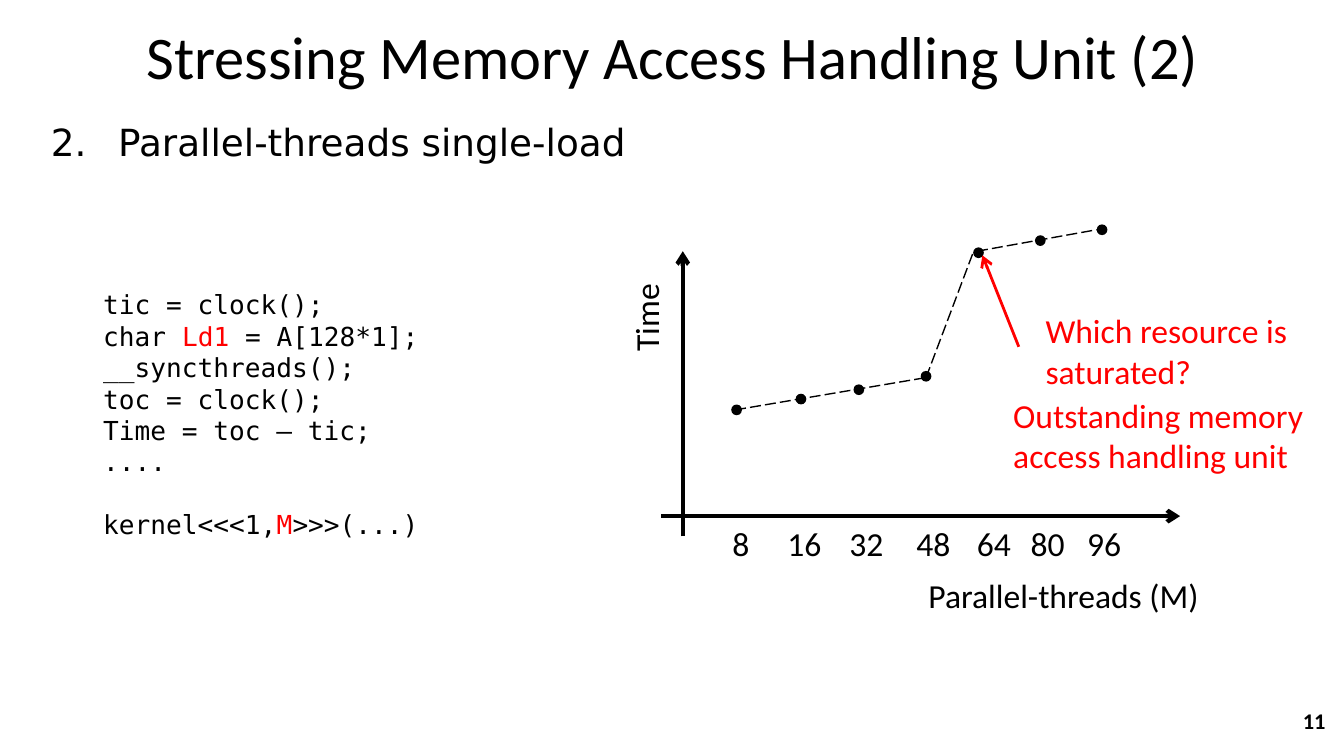
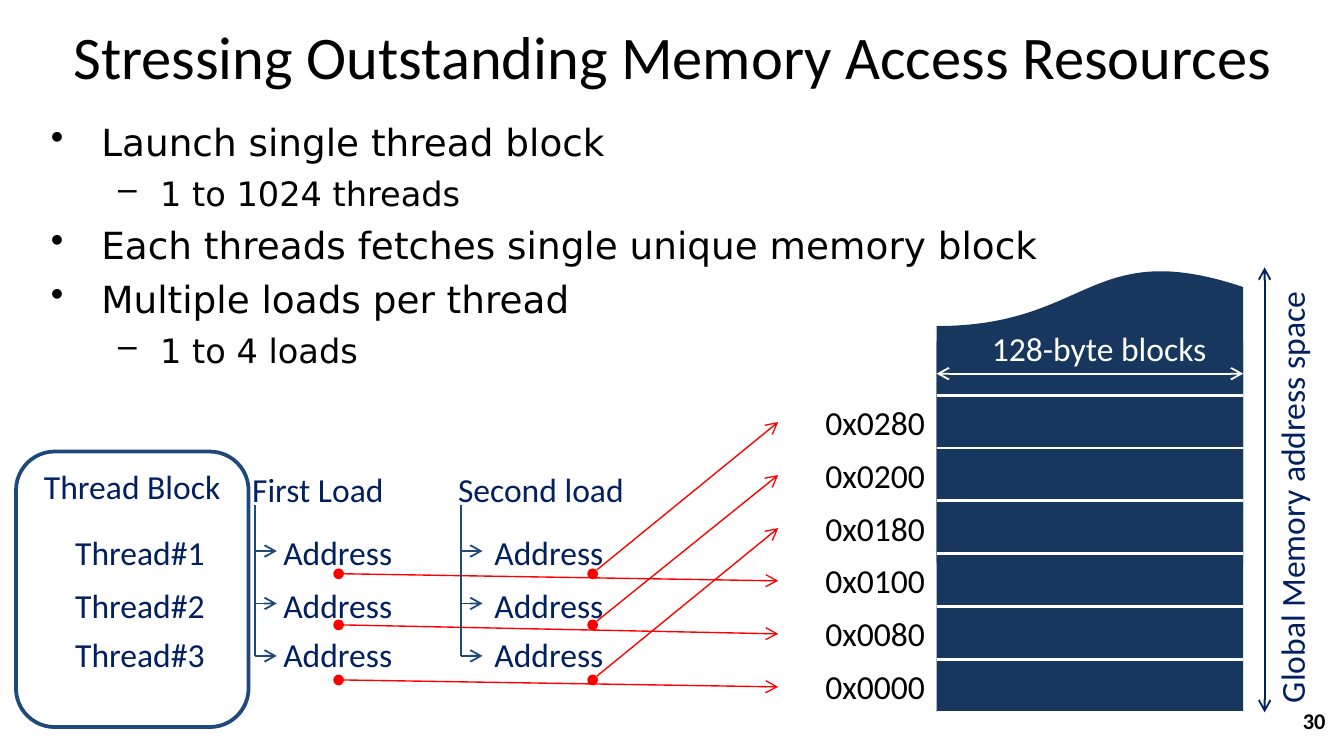
"""Build two slides on stressing GPU memory access handling."""
from typing import NamedTuple, Optional, Union

from lxml.etree import SubElement
from pptx import Presentation
from pptx.dml.color import RGBColor
from pptx.enum.dml import MSO_LINE
from pptx.enum.shapes import MSO_CONNECTOR, MSO_SHAPE as SHAPE
from pptx.enum.text import MSO_ANCHOR as ANCHOR, MSO_AUTO_SIZE as AUTO, PP_ALIGN as ALIGN
from pptx.oxml.ns import qn
from pptx.util import Pt

BLACK, WHITE, RED = "000000", "FFFFFF", "FF0000"
NAVY, BLUE, BLOCK = "002060", "1F497D", "17375E"
SANS, BODY, MONO = "Calibri", "DejaVu Sans", "DejaVu Sans Mono"
DOT = 5.76
LABEL_H = 28.8


class Box(NamedTuple):
    left: float
    top: float
    width: float
    height: float


class Style(NamedTuple):
    size: float = 18
    color: str = BLACK
    font: str = SANS
    bold: bool = False
    align: ALIGN = ALIGN.LEFT


class Span(NamedTuple):
    text: str
    color: str


class Bullet(NamedTuple):
    text: str
    mark: str = "•"
    size: float = 20
    level: int = 0
    indent: float = 27
    hang: float = 27


class Sample(NamedTuple):
    threads: int
    x: float
    y: float
    label_x: float


class Load(NamedTuple):
    title: str
    title_x: float
    bracket_x: float
    address_x: float
    dot_x: float
    start_dx: float
    start_dy: float
    target_y: float


Line = Union[str, list[Span]]

SAMPLES = [
    Sample(8, 394.6, 219.6, 397.1),
    Sample(16, 429.1, 213.8, 431.3),
    Sample(32, 460.1, 208.8, 464.4),
    Sample(48, 496.1, 201.6, 500.4),
    Sample(64, 524.2, 135.4, 532.8),
    Sample(80, 557.3, 128.9, 561.6),
    Sample(96, 590.4, 123.1, 591.8),
]
TRENDS = [(393.8, 219.6, 496.1, 202.3), (523.4, 134.6, 587.5, 123.1),
          (496.1, 202.3, 521.3, 135.4)]
LOADS = [
    Load("First Load", 110.9, 136.8, 144.7, 181.4, 2.9, 0, 311.2),
    Load("Second load", 230.4, 247, 257.8, 317.5, 2.2, -2, 226.1),
]
THREAD_TOPS = [281.5, 309.6, 336.2]
DOT_YS = [307.4, 334.8, 364.3]


def rgb(value: str) -> RGBColor:
    """Turn a hex string into a colour."""
    return RGBColor.from_string(value)


def style_paragraph(p, style: Style) -> None:
    """Apply alignment and font to a paragraph."""
    p.alignment = style.align
    p.font.size, p.font.name, p.font.bold = Pt(style.size), style.font, style.bold
    p.font.color.rgb = rgb(style.color)


def write(tf, lines: list[Line], style: Style) -> None:
    """Fill a text frame, one paragraph per line."""
    for i, line in enumerate(lines):
        p = tf.paragraphs[0] if i == 0 else tf.add_paragraph()
        style_paragraph(p, style)
        for span in [line] if isinstance(line, str) else line:
            r = p.add_run()
            if isinstance(span, str):
                r.text = span
            else:
                r.text = span.text
                r.font.color.rgb = rgb(span.color)


def add_text(slide, box: Box, lines: list[Line], style: Style = Style(), wrap: bool = False,
             rotation: float = 0, fit: bool = True, anchor: ANCHOR = ANCHOR.TOP):
    """Add a text box and return its frame."""
    sp = slide.shapes.add_textbox(*map(Pt, box))
    sp.rotation = rotation
    tf = sp.text_frame
    tf.word_wrap = wrap
    tf.auto_size = AUTO.SHAPE_TO_FIT_TEXT if fit else AUTO.NONE
    tf.vertical_anchor = anchor
    write(tf, lines, style)
    return tf


def add_bullets(slide, bullets: list[Bullet]) -> None:
    """Add the body list."""
    sp = slide.shapes.add_textbox(*map(Pt, (20.2, 60.5, 680.4, 301)))
    tf = sp.text_frame
    tf.word_wrap = True
    for i, item in enumerate(bullets):
        p = tf.paragraphs[0] if i == 0 else tf.add_paragraph()
        p.level = item.level
        p.space_before = Pt(item.size * 0.25)
        props = p._p.get_or_add_pPr()
        props.set("marL", str(Pt(item.indent)))
        props.set("indent", str(-Pt(item.hang)))
        if item.mark.endswith("."):
            SubElement(props, qn("a:buAutoNum"), type="arabicPeriod", startAt=item.mark[:-1])
        else:
            SubElement(props, qn("a:buChar"), char=item.mark)
        style_paragraph(p, Style(item.size, font=BODY))
        p.add_run().text = item.text


def add_shape(slide, kind: SHAPE, box: Box, fill: Optional[str] = None,
              line: Optional[str] = None):
    """Add a flat preset shape."""
    sp = slide.shapes.add_shape(kind, *map(Pt, box))
    sp.shadow.inherit = False
    if fill:
        sp.fill.solid()
        sp.fill.fore_color.rgb = rgb(fill)
    else:
        sp.fill.background()
    if line:
        sp.line.color.rgb = rgb(line)
        sp.line.width = Pt(2)
    else:
        sp.line.fill.background()
    return sp


def add_dot(slide, x: float, y: float, color: str) -> None:
    """Add a dot centred on a point."""
    add_shape(slide, SHAPE.OVAL, Box(x - DOT / 2, y - DOT / 2, DOT, DOT), color)


def add_line(slide, x1: float, y1: float, x2: float, y2: float, color: str, width: float,
             ends: tuple[str, ...] = (), dashed: bool = False) -> None:
    """Add a straight line with optional arrowheads."""
    sp = slide.shapes.add_connector(MSO_CONNECTOR.STRAIGHT, *map(Pt, (x1, y1, x2, y2)))
    sp.line.color.rgb = rgb(color)
    sp.line.width = Pt(width)
    if dashed:
        sp.line.dash_style = MSO_LINE.LONG_DASH
    for end in ends:
        SubElement(sp.line._get_or_add_ln(), qn(f"a:{end}"), type="arrow")
    SubElement(sp._element.spPr, qn("a:effectLst"))


def new_slide(prs, title: str, number: int):
    """Add a slide with its title and page number."""
    slide = prs.slides.add_slide(prs.slide_layouts[5])
    sp = slide.shapes.title
    sp.left, sp.top, sp.width, sp.height = map(Pt, (20.2, 10.1, 680.4, 39.6))
    tf = sp.text_frame
    tf.auto_size = AUTO.NONE
    tf.vertical_anchor = ANCHOR.MIDDLE
    write(tf, [title], Style(32.4, align=ALIGN.CENTER))
    add_text(slide, Box(513.4, 375.1, 203.8, 21.6), [str(number)],
             Style(12, bold=True, align=ALIGN.RIGHT), True, fit=False, anchor=ANCHOR.MIDDLE)
    return slide


def build_parallel_threads(prs) -> None:
    """Build the slide with the code and the timing sketch."""
    slide = new_slide(prs, "Stressing Memory Access Handling Unit (2)", 11)
    add_bullets(slide, [Bullet("Parallel-threads single-load", "2.", indent=36, hang=36)])
    code = [
        "tic = clock();",
        [Span("char ", BLACK), Span("Ld1", RED), Span(" = A[128*1];", BLACK)],
        "__syncthreads();",
        "toc = clock();",
        "Time = toc – tic;",
        "....",
        [Span("kernel<<<1,", BLACK), Span("M", RED), Span(">>>(...)", BLACK)],
    ]
    tf = add_text(slide, Box(48.2, 151.2, 183.6, 143.3), code, Style(14, font=MONO))
    tf.paragraphs[-1].space_before = Pt(16.8)

    add_line(slide, 354.2, 276.5, 632.2, 276.5, BLACK, 2.25, ("tailEnd",))
    add_line(slide, 365.8, 287.3, 365.8, 134.6, BLACK, 2.25, ("tailEnd",))
    add_text(slide, Box(490.3, 304.6, 161.3, LABEL_H), ["Parallel-threads (M)"])
    add_text(slide, Box(320.4, 155.5, 51.1, LABEL_H), ["Time"], rotation=270)
    for trend in TRENDS:
        add_line(slide, *trend, BLACK, 0.75, dashed=True)
    for s in SAMPLES:
        add_dot(slide, s.x, s.y, BLACK)
        width = 14.4 + 9.3 * len(str(s.threads))
        add_text(slide, Box(s.label_x - width / 2, 276.5, width, LABEL_H), [str(s.threads)])

    red = Style(color=RED)
    add_text(slide, Box(553, 162.7, 145.4, 51.1), ["Which resource is", "saturated?"], red)
    add_line(slide, 545.8, 185.8, 526.3, 136.8, RED, 1.5, ("tailEnd",))
    add_text(slide, Box(535.7, 208.1, 171.4, 51.1),
             ["Outstanding memory", "access handling unit"], red)


def add_memory(slide) -> None:
    """Draw the address space with its blocks and addresses."""
    left, right, top, bottom, rows = 501.8, 666, 211.7, 381.6, 6
    pitch = (bottom - top) / rows
    width = right - left
    wave = add_shape(slide, SHAPE.FLOWCHART_DOCUMENT, Box(left, 143.3, width, 158.4), BLOCK)
    wave.rotation = 180
    add_shape(slide, SHAPE.RECTANGLE, Box(left, 182.9, width, bottom - 182.9), BLOCK)
    for i in range(rows + 1):
        y = top + i * pitch
        add_line(slide, left, y, right, y, WHITE, 1.5)
    for i in range(rows):
        add_text(slide, Box(416.9, top + i * pitch, 85.7, LABEL_H),
                 [f"0x{128 * (rows - 1 - i):04x}"], Style(align=ALIGN.RIGHT), True)
    both = ("headEnd", "tailEnd")
    add_line(slide, left, 200.2, right, 200.2, WHITE, 1, both)
    add_text(slide, Box(524.2, 172.1, 131, LABEL_H), ["128-byte blocks"], Style(color=WHITE))
    add_line(slide, 677.5, 143.3, 677.5, bottom, NAVY, 1, both)
    add_text(slide, Box(571.7, 249.1, 240.5, LABEL_H), ["Global Memory address space"],
             Style(color=NAVY), rotation=270)


def add_load(slide, load: Load) -> None:
    """Draw one load column with its arrows to memory."""
    add_text(slide, Box(load.title_x, 247.7, 118.8, LABEL_H), [load.title],
             Style(color=NAVY, align=ALIGN.CENTER), True)
    add_line(slide, load.bracket_x, 270.7, load.bracket_x, 351.4, BLUE, 1)
    for i, (top, y) in enumerate(zip(THREAD_TOPS, DOT_YS)):
        branch_y = 295.2 + 28.1 * i
        add_line(slide, load.bracket_x, branch_y, load.bracket_x + 11.5, branch_y,
                 BLUE, 1, ("tailEnd",))
        add_text(slide, Box(load.address_x, top, 100, LABEL_H), ["Address"],
                 Style(color=NAVY), True)
        add_dot(slide, load.dot_x, y, RED)
        add_line(slide, load.dot_x + load.start_dx, y + load.start_dy,
                 416.9, load.target_y + 28.4 * i, RED, 0.75, ("tailEnd",))


def build_outstanding_access(prs) -> None:
    """Build the slide mapping thread loads to memory blocks."""
    slide = new_slide(prs, "Stressing Outstanding Memory Access Resources", 30)
    add_bullets(slide, [
        Bullet("Launch single thread block"),
        Bullet("1 to 1024 threads", "–", 18, 1, 58.5, 22.5),
        Bullet("Each threads fetches single unique memory block"),
        Bullet("Multiple loads per thread"),
        Bullet("1 to 4 loads", "–", 18, 1, 58.5, 22.5),
    ])
    sp = add_shape(slide, SHAPE.ROUNDED_RECTANGLE, Box(8.6, 241.9, 124.6, 147.6), line=BLUE)
    tf = sp.text_frame
    tf.vertical_anchor = ANCHOR.TOP
    tf.margin_top = Pt(1.8)
    write(tf, ["Thread Block"], Style(color=NAVY, align=ALIGN.CENTER))
    for i, top in enumerate(THREAD_TOPS, 1):
        add_text(slide, Box(31, top, 85.7, LABEL_H), [f"Thread#{i}"],
                 Style(color=NAVY, align=ALIGN.RIGHT), True)
    add_memory(slide)
    for load in LOADS:
        add_load(slide, load)


def main() -> None:
    """Build and save the presentation."""
    prs = Presentation()
    prs.slide_width, prs.slide_height = Pt(720), Pt(405)
    build_parallel_threads(prs)
    build_outstanding_access(prs)
    prs.save("out.pptx")


if __name__ == "__main__":
    main()
